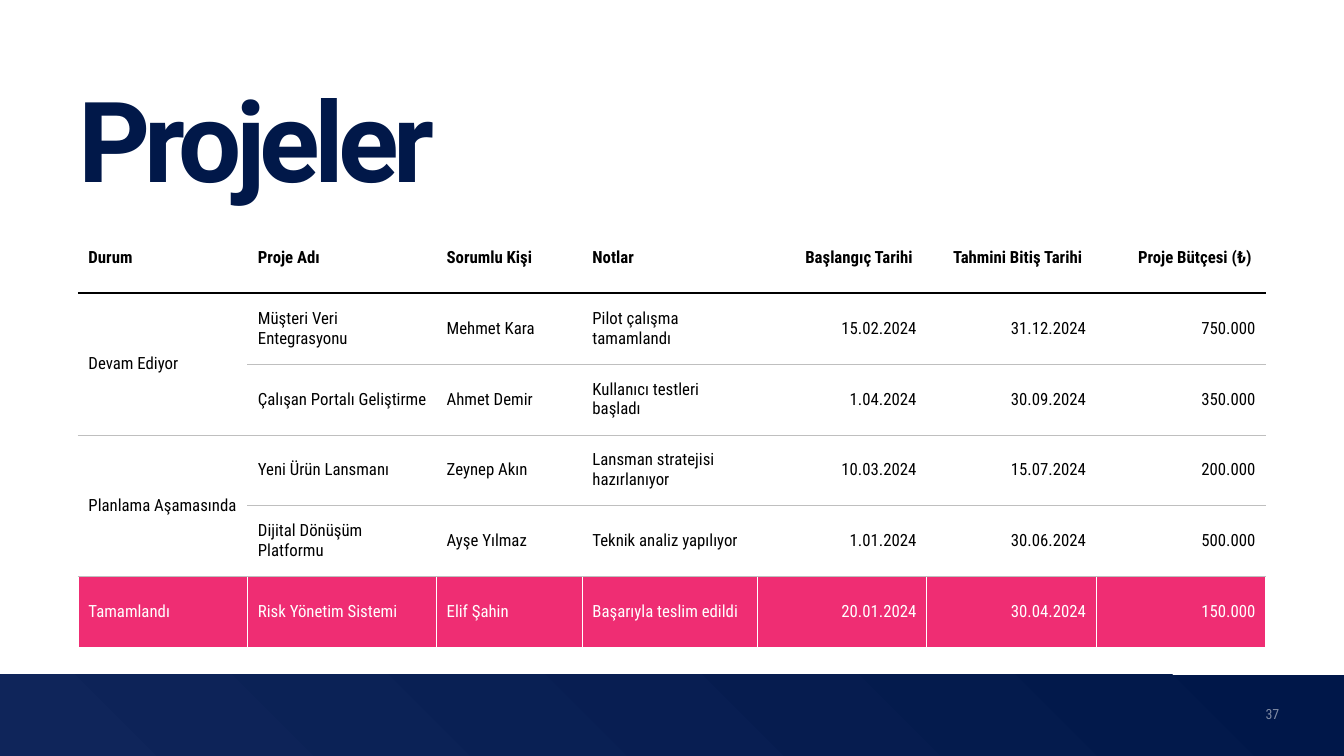
from dataclasses import dataclass
from typing import Optional

from lxml.etree import SubElement
from pptx import Presentation
from pptx.dml.color import RGBColor
from pptx.enum.shapes import MSO_SHAPE as Preset
from pptx.enum.text import MSO_ANCHOR as Anchor, MSO_AUTO_SIZE as AutoSize, PP_ALIGN as Align
from pptx.oxml.ns import qn
from pptx.util import Pt

COLORS = {
    "navy": "011849",
    "band_light": "0F255A",
    "band_dark": "001749",
    "pink": "EF2D73",
    "white": "FFFFFF",
    "black": "000000",
    "gray": "BFBFBF",
}
HEADING_FONT, BODY_FONT = "Roboto", "Roboto Condensed"
SLIDE_WIDTH, SLIDE_HEIGHT = 1440, 810
BAND_TOP = 723
MARGIN = 84
TABLE_TOP, ROW_HEIGHT, CELL_INSET = 238.3, 75.84, 10.8


@dataclass(frozen=True)
class Column:
    heading: str
    width: float
    align: Align = Align.LEFT


@dataclass(frozen=True)
class Border:
    color: str
    width: float


@dataclass(frozen=True)
class RowStyle:
    text: str
    top: Optional[Border]
    bottom: Border
    bold: bool = False
    fill: Optional[str] = None


COLUMNS = [
    Column("Durum", 181.6),
    Column("Proje Adı", 202.2),
    Column("Sorumlu Kişi", 156.2),
    Column("Notlar", 187.2),
    Column("Başlangıç Tarihi ", 181.6, Align.RIGHT),
    Column("Tahmini Bitiş Tarihi ", 181.6, Align.RIGHT),
    Column("Proje Bütçesi (₺) ", 181.6, Align.RIGHT),
]
# An empty status continues the status of the row above.
PROJECTS = [
    ("Devam Ediyor", "Müşteri Veri Entegrasyonu", "Mehmet Kara", "Pilot çalışma tamamlandı",
     "15.02.2024", "31.12.2024", "750.000"),
    ("", "Çalışan Portalı Geliştirme", "Ahmet Demir", "Kullanıcı testleri başladı",
     "1.04.2024", "30.09.2024", "350.000"),
    ("Planlama Aşamasında", "Yeni Ürün Lansmanı", "Zeynep Akın",
     "Lansman stratejisi hazırlanıyor", "10.03.2024", "15.07.2024", "200.000"),
    ("", "Dijital Dönüşüm Platformu", "Ayşe Yılmaz", "Teknik analiz yapılıyor",
     "1.01.2024", "30.06.2024", "500.000"),
    ("Tamamlandı", "Risk Yönetim Sistemi", "Elif Şahin", "Başarıyla teslim edildi",
     "20.01.2024", "30.04.2024", "150.000"),
]

SIDE = Border("white", 1)
THIN = Border("gray", 0.5)
THICK = Border("black", 3)
HEADER = RowStyle("black", None, THICK, bold=True)
FIRST = RowStyle("black", THICK, THIN)
MIDDLE = RowStyle("black", THIN, THIN)
COMPLETED = RowStyle("white", THIN, SIDE, fill="pink")
ROW_STYLES = [HEADER, FIRST, MIDDLE, MIDDLE, MIDDLE, COMPLETED]


def rgb(name: str) -> RGBColor:
    return RGBColor.from_string(COLORS[name])


def format_text(text_frame, font_name: str, size: float, color: str, bold: bool = False,
                align: Align = Align.LEFT) -> None:
    for paragraph in text_frame.paragraphs:
        paragraph.alignment = align
        for run in paragraph.runs:
            run.font.name = font_name
            run.font.size = Pt(size)
            run.font.bold = bold
            run.font.color.rgb = rgb(color)


def add_text(slide, text: str, left: float, top: float, width: float, height: float):
    """Add an unpadded text box and return its text frame."""
    box = slide.shapes.add_textbox(Pt(left), Pt(top), Pt(width), Pt(height))
    text_frame = box.text_frame
    text_frame.word_wrap = True
    text_frame.margin_left = text_frame.margin_right = 0
    text_frame.margin_top = text_frame.margin_bottom = 0
    text_frame.text = text
    return text_frame


def add_footer_band(slide) -> None:
    band = slide.shapes.add_shape(Preset.RECTANGLE, 0, Pt(BAND_TOP), Pt(SLIDE_WIDTH),
                                  Pt(SLIDE_HEIGHT - BAND_TOP))
    band.shadow.inherit = False
    band.line.fill.background()
    band.fill.gradient()
    for stop, color, position in zip(band.fill.gradient_stops,
                                     ("band_light", "band_dark"), (0, 0.99)):
        stop.color.rgb = rgb(color)
        stop.position = position
    gradient = band._element.spPr.find(qn("a:gradFill"))
    gradient.remove(gradient.find(qn("a:lin")))
    radial = SubElement(gradient, qn("a:path"), path="circle")
    SubElement(radial, qn("a:fillToRect"), t="100000", r="100000")


def add_title(slide) -> None:
    text_frame = add_text(slide, "Projeler", MARGIN, 87.2, 1277, 133)
    text_frame.auto_size = AutoSize.SHAPE_TO_FIT_TEXT
    format_text(text_frame, HEADING_FONT, 120, "navy", bold=True)
    paragraph = text_frame.paragraphs[0]
    paragraph.line_spacing = Pt(132)
    paragraph.runs[0]._r.get_or_add_rPr().set("spc", "-600")


def add_page_number(slide) -> None:
    text_frame = add_text(slide, "37", 1356, 750.4, 67, 29)
    text_frame.vertical_anchor = Anchor.MIDDLE
    format_text(text_frame, BODY_FONT, 15, "white")
    properties = text_frame.paragraphs[0].runs[0]._r.get_or_add_rPr()
    SubElement(next(properties.iter(qn("a:srgbClr"))), qn("a:alpha"), val="50000")


def set_border(cell, edge: str, border: Optional[Border]) -> None:
    """Draw one edge of a cell; edges must be set in the order L, R, T, B."""
    line = SubElement(cell._tc.get_or_add_tcPr(), qn(f"a:ln{edge}"))
    if border is None:
        SubElement(line, qn("a:noFill"))
        return
    line.set("w", str(Pt(border.width)))
    fill = SubElement(line, qn("a:solidFill"))
    SubElement(fill, qn("a:srgbClr"), val=COLORS[border.color])


def fill_cell(cell, text: str, column: Column, style: RowStyle) -> None:
    cell.text_frame.text = text
    cell.vertical_anchor = Anchor.MIDDLE
    cell.margin_left = cell.margin_right = Pt(CELL_INSET)
    cell.margin_top = cell.margin_bottom = Pt(CELL_INSET)
    format_text(cell.text_frame, BODY_FONT, 18, style.text, style.bold, column.align)
    for edge, border in zip("LRTB", (SIDE, SIDE, style.top, style.bottom)):
        set_border(cell, edge, border)
    if style.fill:
        cell.fill.solid()
        cell.fill.fore_color.rgb = rgb(style.fill)
    else:
        cell.fill.background()


def add_project_table(slide) -> None:
    rows = [tuple(column.heading for column in COLUMNS), *PROJECTS]
    width = sum(column.width for column in COLUMNS)
    table = slide.shapes.add_table(len(rows), len(COLUMNS), Pt(MARGIN), Pt(TABLE_TOP),
                                   Pt(width), Pt(ROW_HEIGHT * len(rows))).table
    table.first_row = table.horz_banding = False
    for table_column, column in zip(table.columns, COLUMNS):
        table_column.width = Pt(column.width)
    for row_index, (texts, style) in enumerate(zip(rows, ROW_STYLES)):
        table.rows[row_index].height = Pt(ROW_HEIGHT)
        for column_index, (text, column) in enumerate(zip(texts, COLUMNS)):
            fill_cell(table.cell(row_index, column_index), text, column, style)
        if not texts[0]:
            table.cell(row_index - 1, 0).merge(table.cell(row_index, 0))


def main() -> None:
    presentation = Presentation()
    presentation.slide_width = Pt(SLIDE_WIDTH)
    presentation.slide_height = Pt(SLIDE_HEIGHT)
    slide = presentation.slides.add_slide(presentation.slide_layouts[6])
    add_footer_band(slide)
    add_title(slide)
    add_project_table(slide)
    add_page_number(slide)
    presentation.save("out.pptx")


if __name__ == "__main__":
    main()
